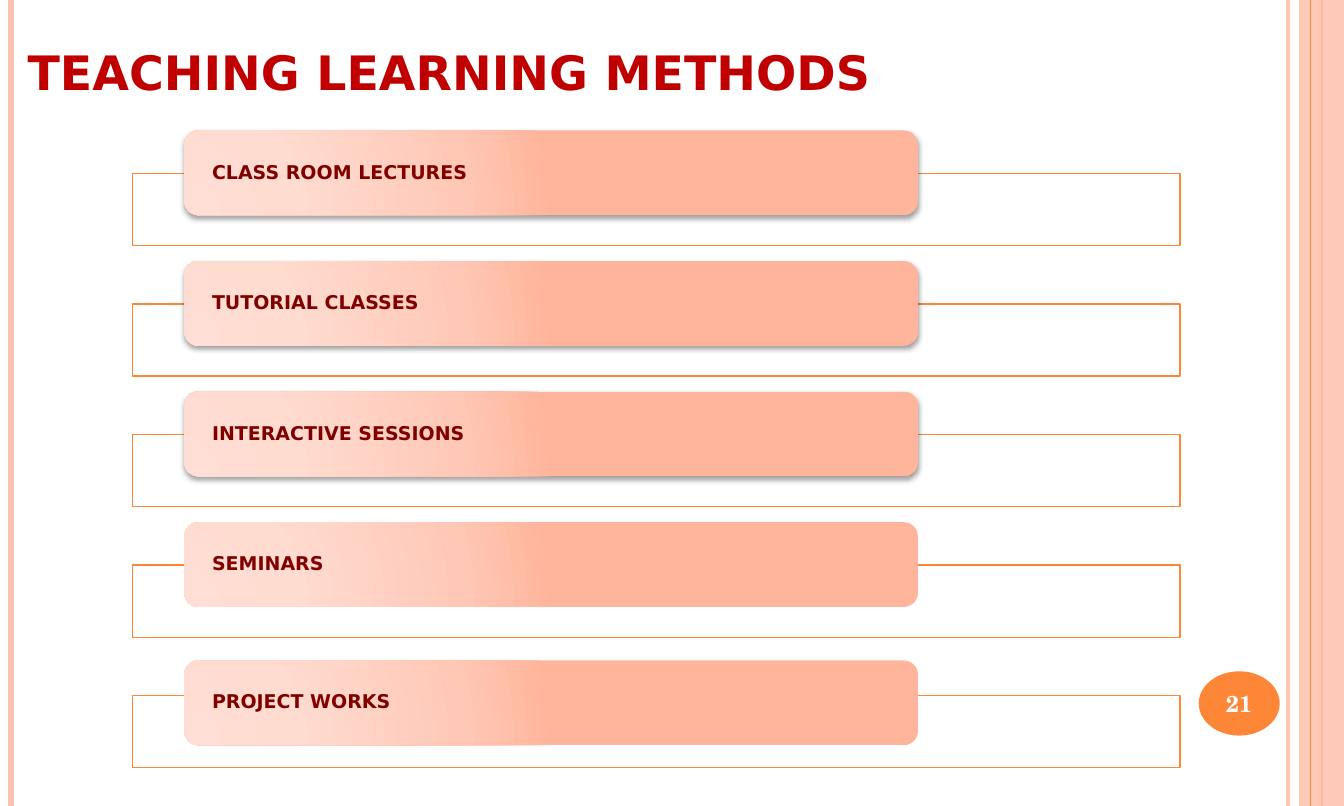
from dataclasses import dataclass

from lxml.etree import SubElement
from pptx import Presentation
from pptx.dml.color import RGBColor
from pptx.enum.shapes import MSO_CONNECTOR, MSO_SHAPE
from pptx.enum.text import MSO_ANCHOR as Anchor, MSO_AUTO_SIZE as AutoSize, PP_ALIGN as Align
from pptx.oxml import parse_xml
from pptx.oxml.ns import nsdecls, qn
from pptx.shapes.autoshape import Shape
from pptx.slide import Slide
from pptx.text.text import TextFrame
from pptx.util import Pt


@dataclass(frozen=True)
class Theme:
    orange: str = "FE8637"
    peach: str = "FEC3AE"
    white: str = "FFFFFF"
    title: str = "C00000"
    label: str = "800000"
    sans: str = "DejaVu Sans"
    serif: str = "TeX Gyre Schola"
    title_size: float = 35
    label_size: float = 14
    number_size: float = 17
    gradient: tuple = ((0, "FFDED5"), (30, "FFDBD0"), (75, "FFC8B6"), (100, "FFB59B"))


@dataclass(frozen=True)
class Box:
    left: float
    top: float
    width: float
    height: float


@dataclass(frozen=True)
class Rule:
    x: float
    color: str
    weight: float
    opacity: int = 100


@dataclass(frozen=True)
class Method:
    label: str
    drop: float = 0
    shadow: bool = True


THEME = Theme()
PAGE_WIDTH, PAGE_HEIGHT = 992.13, 595.28
ROW_PITCH = 96.43
FRAME = Box(97.9, 128.1, 773.3, 53.3)
PILL = Box(136.1, 96.4, 541.6, 62.6)
RULES = (
    Rule(950.9, THEME.peach, 3, 93),
    Rule(7.9, THEME.peach, 4.5),
    Rule(975.6, THEME.orange, 1.5),
)
INNER_RULE = Rule(967.7, THEME.orange, 0.75)
METHODS = (
    Method("CLASS ROOM LECTURES"),
    Method("TUTORIAL CLASSES"),
    Method("INTERACTIVE SESSIONS"),
    Method("SEMINARS", shadow=False),
    Method("PROJECT WORKS", drop=5.7, shadow=False),
)


def set_opacity(shape, percent: int) -> None:
    color = shape._element.spPr.find(".//" + qn("a:srgbClr"))
    SubElement(color, qn("a:alpha"), val=str(percent * 1000))


def add_rule(page: Slide, rule: Rule) -> None:
    """Draw a vertical line over the full page height."""
    line = page.shapes.add_connector(
        MSO_CONNECTOR.STRAIGHT, Pt(rule.x), Pt(0), Pt(rule.x), Pt(PAGE_HEIGHT))
    line.line.color.rgb = RGBColor.from_string(rule.color)
    line.line.width = Pt(rule.weight)
    SubElement(line._element.spPr, qn("a:effectLst"))
    if rule.opacity < 100:
        set_opacity(line, rule.opacity)


def add_box(page: Slide, kind: MSO_SHAPE, box: Box, fill: str, opacity: int = 100) -> Shape:
    shape = page.shapes.add_shape(
        kind, Pt(box.left), Pt(box.top), Pt(box.width), Pt(box.height))
    shape.shadow.inherit = False
    shape.line.fill.background()
    shape.fill.solid()
    shape.fill.fore_color.rgb = RGBColor.from_string(fill)
    if opacity < 100:
        set_opacity(shape, opacity)
    return shape


def write(frame: TextFrame, text: str, font: str, size: float, color: str,
          align: Align = Align.LEFT, anchor: Anchor = Anchor.MIDDLE,
          side: float = 8.6, edge: float = 4.3) -> None:
    frame.text = text
    frame.word_wrap = True
    frame.vertical_anchor = anchor
    frame.margin_left = frame.margin_right = Pt(side)
    frame.margin_top = frame.margin_bottom = Pt(edge)
    para = frame.paragraphs[0]
    para.alignment = align
    span = para.runs[0].font
    span.name, span.size, span.bold = font, Pt(size), True
    span.color.rgb = RGBColor.from_string(color)


def set_gradient(shape: Shape) -> None:
    stops = "".join(
        f'<a:gs pos="{percent * 1000}"><a:srgbClr val="{color}"/></a:gs>'
        for percent, color in THEME.gradient)
    gradient = parse_xml(
        f'<a:gradFill {nsdecls("a")} rotWithShape="1"><a:gsLst>{stops}</a:gsLst>'
        '<a:path path="circle"><a:fillToRect l="5000" t="100000" r="120000" b="10000"/>'
        '</a:path></a:gradFill>')
    properties = shape._element.spPr
    properties.replace(properties.find(qn("a:solidFill")), gradient)


def add_shadow(shape: Shape) -> None:
    effects = shape._element.spPr.find(qn("a:effectLst"))
    effects.append(parse_xml(
        f'<a:outerShdw {nsdecls("a")} blurRad="{Pt(4)}" dist="{Pt(2)}" dir="5400000" '
        'rotWithShape="0"><a:srgbClr val="000000"><a:alpha val="40000"/></a:srgbClr>'
        '</a:outerShdw>'))


def add_method(page: Slide, method: Method, row: int) -> None:
    """Draw one outlined frame with its labelled pill on top."""
    offset = row * ROW_PITCH
    frame = add_box(page, MSO_SHAPE.RECTANGLE,
                    Box(FRAME.left, FRAME.top + offset, FRAME.width, FRAME.height),
                    THEME.white, 90)
    frame.line.color.rgb = RGBColor.from_string(THEME.orange)
    frame.line.width = Pt(1)
    pill = add_box(page, MSO_SHAPE.ROUNDED_RECTANGLE,
                   Box(PILL.left, PILL.top + offset + method.drop, PILL.width, PILL.height),
                   THEME.peach)
    set_gradient(pill)
    if method.shadow:
        add_shadow(pill)
    write(pill.text_frame, method.label, THEME.sans, THEME.label_size, THEME.label,
          side=17.4, edge=0)
    pill.text_frame.paragraphs[0].line_spacing = 0.9


def add_title(page: Slide, text: str) -> None:
    title = page.shapes.title
    title.left, title.top, title.width, title.height = Pt(11.8), Pt(27.4), Pt(882.7), Pt(51.1)
    write(title.text_frame, text, THEME.sans, THEME.title_size, THEME.title, anchor=Anchor.TOP)
    title.text_frame.auto_size = AutoSize.SHAPE_TO_FIT_TEXT


def main() -> None:
    deck = Presentation()
    deck.slide_width, deck.slide_height = Pt(PAGE_WIDTH), Pt(PAGE_HEIGHT)
    page = deck.slides.add_slide(deck.slide_layouts.get_by_name("Title Only"))

    for rule in RULES:
        add_rule(page, rule)
    add_box(page, MSO_SHAPE.RECTANGLE, Box(959, 0, PAGE_WIDTH - 959, PAGE_HEIGHT),
            THEME.peach, 87)
    add_rule(page, INNER_RULE)
    badge = add_box(page, MSO_SHAPE.OVAL, Box(884.9, 495.8, 59.8, 47.5), THEME.orange)
    write(badge.text_frame, "21", THEME.serif, THEME.number_size, THEME.white,
          Align.CENTER, side=0, edge=0)

    add_title(page, "TEACHING LEARNING METHODS")
    for row, method in enumerate(METHODS):
        add_method(page, method, row)
    deck.save("out.pptx")


if __name__ == "__main__":
    main()
